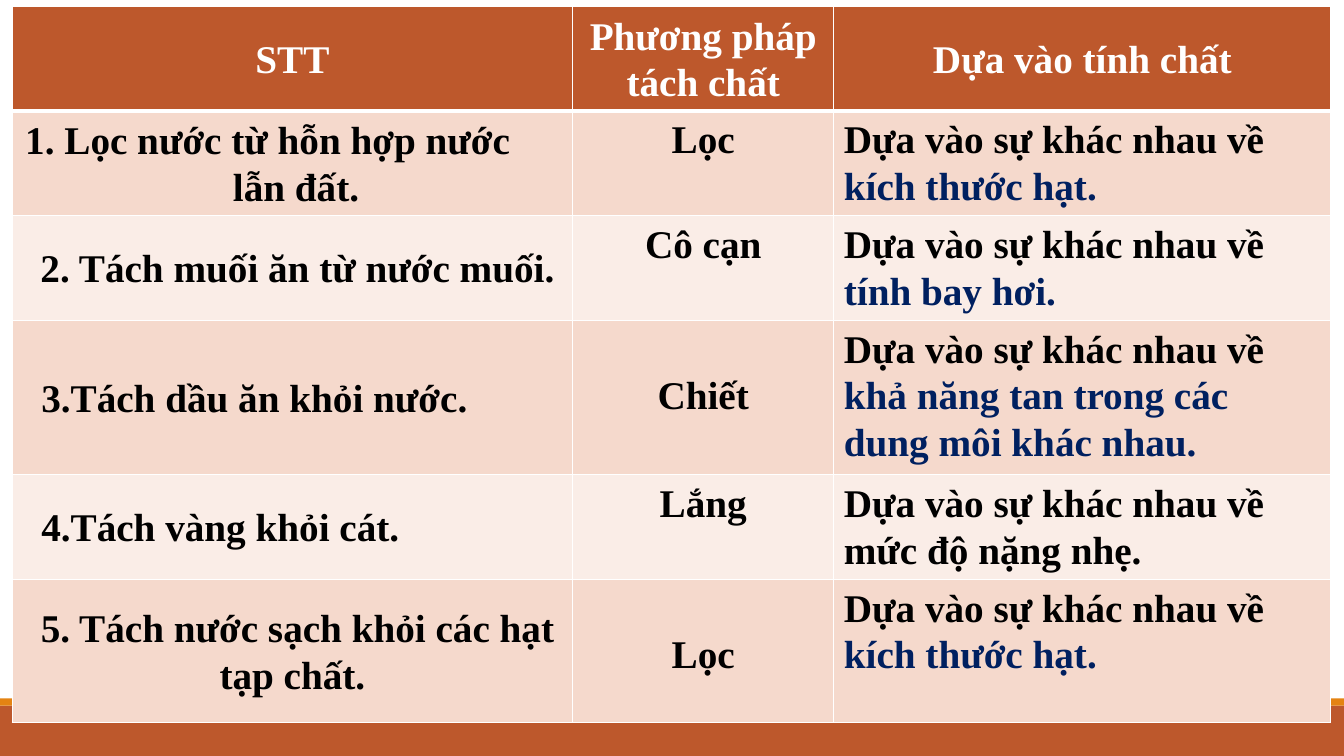
from dataclasses import dataclass

from lxml.etree import SubElement
from pptx import Presentation
from pptx.dml.color import RGBColor
from pptx.enum.shapes import MSO_SHAPE
from pptx.enum.text import MSO_ANCHOR, PP_ALIGN
from pptx.oxml.ns import qn
from pptx.util import Inches, Pt

WHITE = RGBColor(0xFF, 0xFF, 0xFF)
BLACK = RGBColor(0, 0, 0)
NAVY = RGBColor(0x00, 0x20, 0x60)
RUST = RGBColor(0xBD, 0x58, 0x2C)
ORANGE = RGBColor(0xE4, 0x83, 0x12)
BANDS = [RGBColor(0xF5, 0xD9, 0xCC), RGBColor(0xFA, 0xED, 0xE7)]

FONT = "Times New Roman"
COLUMN_WIDTHS = [5.56, 2.59, 4.93]
ROW_HEIGHTS = [1.04, 1.04, 1.04, 1.53, 1.04, 1.42]
HEADINGS = ["STT", "Phương pháp tách chất", "Dựa vào tính chất"]
BASIS = "Dựa vào sự khác nhau về "
TOP_MARGIN = 0.05
LOWERED_MARGIN = 0.51


@dataclass
class Separation:
    task: str
    method: str
    feature: str
    feature_color: RGBColor = NAVY
    task_align: PP_ALIGN = PP_ALIGN.LEFT
    task_margins: tuple = (0.1, 0.1)
    task_indents: tuple = (0, 0)  # paragraph left, first line
    method_top: float = TOP_MARGIN


SEPARATIONS = [
    Separation("1. Lọc nước từ hỗn hợp nước lẫn đất.", "Lọc", "kích thước hạt.",
               task_indents=(2.09, -2.06)),
    Separation("2. Tách muối ăn từ nước muối.", "Cô cạn", "tính bay hơi.",
               task_align=PP_ALIGN.CENTER, task_margins=(0.1, 0)),
    Separation("3.Tách dầu ăn khỏi nước.", "Chiết",
               "khả năng tan trong các dung môi khác nhau.",
               task_margins=(0.29, 0), method_top=LOWERED_MARGIN),
    Separation("4.Tách vàng khỏi cát.", "Lắng", "mức độ nặng nhẹ.",
               feature_color=BLACK, task_margins=(0.29, 0.1)),
    Separation("5. Tách nước sạch khỏi các hạt tạp chất.", "Lọc", "kích thước hạt.",
               task_align=PP_ALIGN.CENTER, task_indents=(0, 0.1),
               method_top=LOWERED_MARGIN),
]


def add_bar(slide, left, top, width, height, color):
    bar = slide.shapes.add_shape(MSO_SHAPE.RECTANGLE, Inches(left), Inches(top),
                                 Inches(width), Inches(height))
    bar.shadow.inherit = False
    bar.fill.solid()
    bar.fill.fore_color.rgb = color
    bar.line.fill.background()


def add_footer(slide, left, top, width, height):
    """Draw a thin orange strip above a rust band."""
    strip = 0.07
    add_bar(slide, left, top + strip, width, height - strip, RUST)
    add_bar(slide, left, top, width, strip, ORANGE)


def set_borders(cell, bottom, top):
    properties = cell._tc.get_or_add_tcPr()
    for side, points in (("L", 1), ("R", 1), ("T", top), ("B", bottom)):
        line = SubElement(properties, qn(f"a:ln{side}"), w=str(Pt(points)))
        SubElement(SubElement(line, qn("a:solidFill")), qn("a:srgbClr"), val=str(WHITE))


def fill_cell(cell, parts, color, align=PP_ALIGN.CENTER, anchor=MSO_ANCHOR.MIDDLE,
              margins=(0.1, 0.1), top=TOP_MARGIN, indents=(0, 0), borders=(1, 1)):
    """Fill a cell with (text, colour) parts in one paragraph."""
    set_borders(cell, *borders)
    cell.fill.solid()
    cell.fill.fore_color.rgb = color
    cell.vertical_anchor = anchor
    cell.margin_left, cell.margin_right = (Inches(margin) for margin in margins)
    cell.margin_top, cell.margin_bottom = Inches(top), Inches(TOP_MARGIN)
    para = cell.text_frame.paragraphs[0]
    para.alignment = align
    para.line_spacing = 1.07
    for name, length in zip(("marL", "indent"), indents):
        para._p.get_or_add_pPr().set(name, str(Inches(length)))
    for text, text_color in parts:
        span = para.add_run()
        span.text = text
        span.font.name = FONT
        span.font.size = Pt(28)
        span.font.bold = True
        span.font.color.rgb = text_color


def fill_separation(cells, separation, color, top_border):
    task, method, basis = cells
    borders = (1, top_border)
    fill_cell(task, [(separation.task, BLACK)], color, separation.task_align,
              margins=separation.task_margins, indents=separation.task_indents,
              borders=borders)
    fill_cell(method, [(separation.method, BLACK)], color, anchor=MSO_ANCHOR.TOP,
              top=separation.method_top, borders=borders)
    fill_cell(basis, [(BASIS, BLACK), (separation.feature, separation.feature_color)],
              color, PP_ALIGN.LEFT, MSO_ANCHOR.TOP, borders=borders)


def add_separation_table(slide, left, top):
    table = slide.shapes.add_table(
        len(ROW_HEIGHTS), len(COLUMN_WIDTHS), Inches(left), Inches(top),
        Inches(sum(COLUMN_WIDTHS)), Inches(sum(ROW_HEIGHTS))).table
    for column, width in zip(table.columns, COLUMN_WIDTHS):
        column.width = Inches(width)
    for row, height in zip(table.rows, ROW_HEIGHTS):
        row.height = Inches(height)
    for cell, heading in zip(table.rows[0].cells, HEADINGS):
        fill_cell(cell, [(heading, WHITE)], RUST, borders=(3, 1))
    for index, separation in enumerate(SEPARATIONS):
        fill_separation(table.rows[index + 1].cells, separation, BANDS[index % 2],
                        top_border=1 if index else 3)


def main():
    deck = Presentation()
    deck.slide_width, deck.slide_height = Inches(13.33), Inches(7.5)
    slide = deck.slides.add_slide(deck.slide_layouts[6])
    add_footer(slide, 0, 6.93, 13.33, 0.57)
    add_separation_table(slide, 0.12, 0.06)
    deck.save("out.pptx")


if __name__ == "__main__":
    main()
